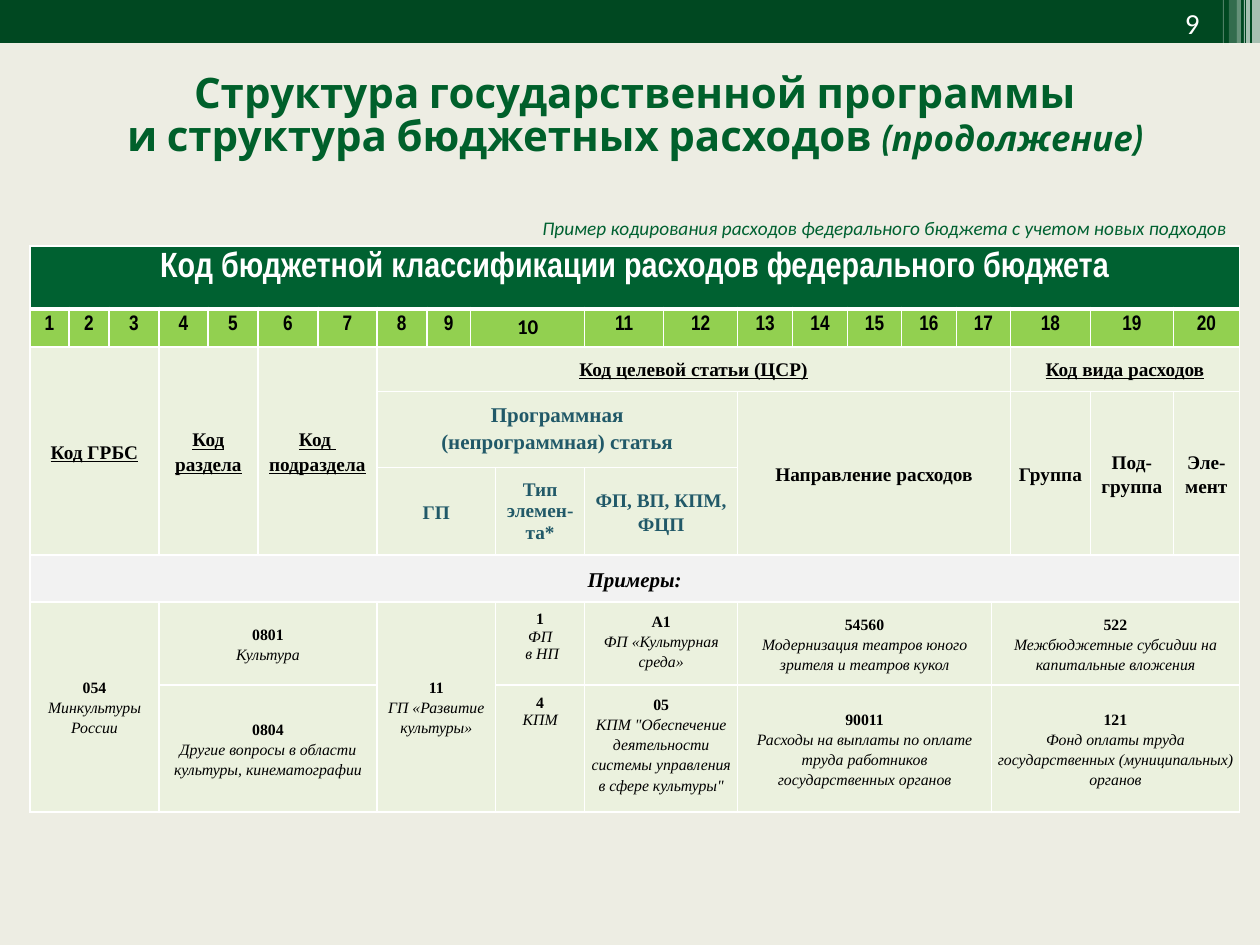
from lxml.etree import SubElement
from pptx import Presentation
from pptx.dml.color import RGBColor
from pptx.enum.shapes import MSO_SHAPE as Shape
from pptx.enum.text import MSO_ANCHOR as Anchor, MSO_AUTO_SIZE as AutoSize, PP_ALIGN as Align
from pptx.oxml.ns import qn
from pptx.util import Pt

EMU_PER_PX = 914400 / 126
COLORS = {
    "page": "EDEDE3", "bar": "004821", "white": "FFFFFF", "black": "000000",
    "title": "00602B", "header": "006131", "number": "92D050",
    "body": "EBF1DE", "examples": "F2F2F2", "teal": "215968",
}
SERIF, NARROW, SANS = "Times New Roman", "Arial Narrow", "Calibri"

# name: size, font, colour, bold, italic, underline
STYLES = {
    "title": (24, "Cabin", "title", True, False, False),
    "title note": (20, "Cabin", "title", True, True, False),
    "caption": (11, SANS, "header", False, True, False),
    "page number": (16.6, SANS, "white", False, False, False),
    "table title": (20, NARROW, "white", True, False, False),
    "position": (12, NARROW, "black", True, False, False),
    "position sans": (12, SANS, "black", True, False, False),
    "group": (11, SERIF, "black", True, False, True),
    "program": (12, SERIF, "teal", True, False, False),
    "part": (11, SERIF, "black", True, False, False),
    "program part": (11, SERIF, "teal", True, False, False),
    "examples": (12, SERIF, "black", True, True, False),
    "code": (9, SERIF, "black", True, False, False),
    "meaning": (9, SERIF, "black", False, True, False),
}

TITLE_RUNS = [
    ("Структура государственной программы", "title"), None,
    ("и структура бюджетных расходов ", "title"), ("(продолжение)", "title note"),
]
CAPTION = "Пример кодирования расходов федерального бюджета с учетом новых подходов"
# left, width, height, opacity in percent
STRIPES = [(1252, 8, 43, 65), (1246, 4, 43, 65), (1244, 1, 43, 60),
           (1237, 4, 43, 40), (1229, 8, 45, 20), (1223, 1, 45, 30)]

TABLE_LEFT, TABLE_TOP = 30, 246
COLUMNS = [39, 40, 50, 49, 50, 60, 59, 50, 44, 25, 89,
           79, 74, 55, 55, 54, 55, 35, 19, 80, 83, 66]
ROWS = [63, 38, 44, 76, 87, 47, 83, 126]
TABLE_TITLE = "Код бюджетной классификации расходов федерального бюджета"
WIDE_POSITIONS = {10, 17}  # positions that take two grid columns

# row, column, row span, column span, style, lines
HEADINGS = [
    (2, 0, 3, 3, "group", ["Код ГРБС"]),
    (2, 3, 3, 2, "group", ["Код раздела"]),
    (2, 5, 3, 2, "group", ["Код ", "подраздела"]),
    (2, 7, 1, 12, "group", ["Код целевой статьи (ЦСР)"]),
    (2, 19, 1, 3, "group", ["Код вида расходов"]),
    (3, 7, 1, 6, "program", ["Программная", "(непрограммная) статья"]),
    (3, 13, 2, 6, "part", ["Направление расходов"]),
    (3, 19, 2, 1, "part", ["Группа"]),
    (3, 20, 2, 1, "part", ["Под-", "группа"]),
    (3, 21, 2, 1, "part", ["Эле-мент"]),
    (4, 7, 1, 3, "program part", ["ГП"]),
    (4, 10, 1, 1, "program part", ["Тип элемен-та*"]),
    (4, 11, 1, 2, "program part", ["ФП, ВП, КПМ, ФЦП"]),
    (5, 0, 1, 22, "examples", ["Примеры:"]),
]
# row, column, row span, column span, code, lines of meaning
EXAMPLES = [
    (6, 0, 2, 3, "054", ["Минкультуры России"]),
    (6, 3, 1, 4, "0801", ["Культура"]),
    (6, 7, 2, 3, "11", ["ГП «Развитие культуры»"]),
    (6, 10, 1, 1, "1", ["ФП", " в НП"]),
    (6, 11, 1, 2, "А1", ["ФП «Культурная среда»"]),
    (6, 13, 1, 5, "54560", ["Модернизация театров юного зрителя и театров кукол"]),
    (6, 18, 1, 4, "522", ["Межбюджетные субсидии на капитальные вложения"]),
    (7, 3, 1, 4, "0804", ["Другие вопросы в области культуры, кинематографии"]),
    (7, 10, 1, 1, "4", ["КПМ"]),
    (7, 11, 1, 2, "05", ['КПМ "Обеспечение деятельности системы управления в сфере культуры"']),
    (7, 13, 1, 5, "90011", ["Расходы на выплаты по оплате труда работников государственных органов"]),
    (7, 18, 1, 4, "121", ["Фонд оплаты труда государственных (муниципальных) органов"]),
]
TOP_CELLS = {(2, 7), (2, 19), (3, 7), (6, 10), (6, 11), (7, 10), (7, 11)}
SINGLE_SPACED = {(4, 10), (6, 10), (7, 10)}


def px(value):
    return round(value * EMU_PER_PX)


def color(name):
    return RGBColor.from_string(COLORS[name])


def add_span(para, text, style):
    size, name, tint, bold, italic, underline = STYLES[style]
    span = para.add_run()
    span.text = text
    font = span.font
    font.size, font.name = Pt(size), name
    font.bold, font.italic, font.underline = bold, italic, underline
    font.color.rgb = color(tint)


def add_bar(page, left, width, height, fill, opacity=100):
    bar = page.shapes.add_shape(Shape.RECTANGLE, px(left), 0, px(width), px(height))
    bar.shadow.inherit = False
    bar.line.fill.background()
    bar.fill.solid()
    bar.fill.fore_color.rgb = color(fill)
    if opacity < 100:
        tint = next(bar._element.spPr.iter(qn("a:srgbClr")))
        SubElement(tint, qn("a:alpha"), val=str(opacity * 1000))


def add_label(page, left, top, width, height, text, style):
    box = page.shapes.add_textbox(px(left), px(top), px(width), px(height))
    frame = box.text_frame
    frame.word_wrap = True
    frame.vertical_anchor = Anchor.MIDDLE
    para = frame.paragraphs[0]
    para.alignment = Align.RIGHT
    add_span(para, text, style)


def style_cell(cell, fill, top=1, bottom=1):
    """Give a cell white borders (widths in points) and a solid fill."""
    props = cell._tc.get_or_add_tcPr()
    for side, width in (("L", 1), ("R", 1), ("T", top), ("B", bottom)):
        line = SubElement(props, qn("a:ln" + side), w=str(Pt(width)))
        solid = SubElement(line, qn("a:solidFill"))
        SubElement(solid, qn("a:srgbClr"), val=COLORS["white"])
    cell.fill.solid()
    cell.fill.fore_color.rgb = color(fill)


def fill_cell(table, row, column, row_span, column_span, lines, margins, spacing, anchor):
    cell = table.cell(row, column)
    if row_span * column_span > 1:
        cell.merge(table.cell(row + row_span - 1, column + column_span - 1))
    side, edge = margins
    cell.margin_left = cell.margin_right = px(side)
    cell.margin_top = cell.margin_bottom = px(edge)
    cell.vertical_anchor = anchor
    frame = cell.text_frame
    for index, (text, style) in enumerate(lines):
        para = frame.add_paragraph() if index else frame.paragraphs[0]
        para.alignment = Align.CENTER
        para.line_spacing = spacing
        add_span(para, text, style)


def add_code_table(page):
    table = page.shapes.add_table(len(ROWS), len(COLUMNS), px(TABLE_LEFT), px(TABLE_TOP),
                                  px(sum(COLUMNS)), px(sum(ROWS))).table
    for column, width in zip(table.columns, COLUMNS):
        column.width = px(width)
    for row, height in zip(table.rows, ROWS):
        row.height = px(height)

    row_fills = ["header", "number", "body", "body", "body", "examples", "body", "body"]
    for row, fill in enumerate(row_fills):
        for column in range(len(COLUMNS)):
            style_cell(table.cell(row, column), fill,
                       top=3 if row == 1 else 1, bottom=3 if row == 0 else 1)

    fill_cell(table, 0, 0, 1, len(COLUMNS), [(TABLE_TITLE, "table title")], (12, 6), 1.0, Anchor.TOP)
    column = 0
    for position in range(1, 21):
        span = 2 if position in WIDE_POSITIONS else 1
        style = "position sans" if position == 10 else "position"
        fill_cell(table, 1, column, 1, span, [(str(position), style)], (12, 6), 1.0, Anchor.TOP)
        column += span

    body = [(*place, [(line, style) for line in lines]) for *place, style, lines in HEADINGS]
    body += [(*place, [(code, "code")] + [(line, "meaning") for line in lines])
             for *place, code, lines in EXAMPLES]
    for row, column, row_span, column_span, lines in body:
        spacing = 1.0 if (row, column) in SINGLE_SPACED else 1.15
        anchor = Anchor.TOP if (row, column) in TOP_CELLS else Anchor.MIDDLE
        fill_cell(table, row, column, row_span, column_span, lines, (5, 9), spacing, anchor)


def set_title(page):
    title = page.shapes.title
    title.left, title.top, title.width, title.height = px(5), px(96), px(1260), px(43)
    frame = title.text_frame
    frame.auto_size = AutoSize.NONE
    frame.vertical_anchor = Anchor.MIDDLE
    para = frame.paragraphs[0]
    para.alignment = Align.CENTER
    para.line_spacing = 0.85
    for item in TITLE_RUNS:
        if item:
            add_span(para, *item)
        else:
            para.add_line_break()


def main():
    deck = Presentation()
    deck.slide_width, deck.slide_height = px(1260), px(945)
    page = deck.slides.add_slide(deck.slide_layouts[5])
    page.background.fill.solid()
    page.background.fill.fore_color.rgb = color("page")
    add_bar(page, 0, 1260, 43, "bar")
    for left, width, height, opacity in STRIPES:
        add_bar(page, left, width, height, "white", opacity)
    add_label(page, 919, -2, 293, 50, "9", "page number")
    add_code_table(page)
    set_title(page)
    add_label(page, 0, 209, 1240, 37, CAPTION, "caption")
    deck.save("out.pptx")


if __name__ == "__main__":
    main()
